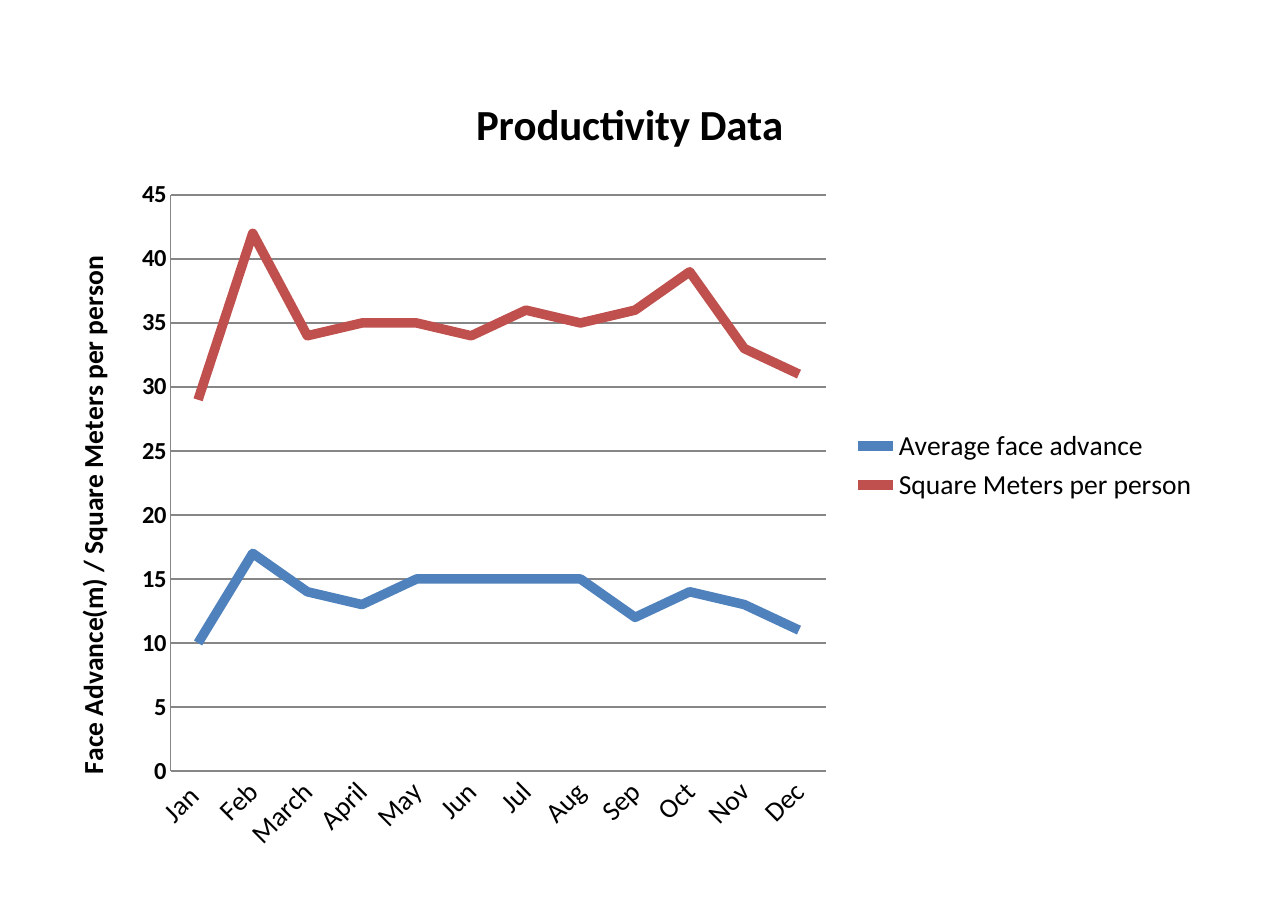
from lxml import etree
from pptx import Presentation
from pptx.chart.data import CategoryChartData
from pptx.dml.color import RGBColor
from pptx.enum.chart import XL_CHART_TYPE, XL_LEGEND_POSITION, XL_TICK_MARK
from pptx.oxml.ns import qn
from pptx.util import Inches, Pt

BLACK = RGBColor(0x00, 0x00, 0x00)
GRAY = RGBColor(0x86, 0x86, 0x86)
BLUE = RGBColor(0x4F, 0x81, 0xBD)
RED = RGBColor(0xC0, 0x50, 0x4D)

CHART_WIDTH, CHART_HEIGHT = 10.54, 7.27
MONTHS = ["Jan ", "Feb", "March", "April", "May", "Jun",
          "Jul", "Aug", "Sep", "Oct", "Nov", "Dec"]
SERIES = [
    ("Average face advance", BLUE,
     [10, 17, 14, 13, 15, 15, 15, 15, 12, 14, 13, 11]),
    ("Square Meters per person", RED,
     [29, 42, 34, 35, 35, 34, 36, 35, 36, 39, 33, 31]),
]


def style_font(font, size, bold):
    values = {"name": "Calibri", "size": Pt(size), "bold": bold}
    for name, value in values.items():
        setattr(font, name, value)
    font.color.rgb = BLACK


def place(element, index, left, top, width=None, height=None):
    """Give a chart part a manual layout, in inches from the chart corner."""
    for layout in element.findall(qn("c:layout")):
        element.remove(layout)
    values = {"xMode": "edge", "yMode": "edge",
              "x": left / CHART_WIDTH, "y": top / CHART_HEIGHT}
    if width is not None:
        values = {"layoutTarget": "inner", **values,
                  "w": width / CHART_WIDTH, "h": height / CHART_HEIGHT}
    layout = etree.Element(qn("c:layout"))
    manual = etree.SubElement(layout, qn("c:manualLayout"))
    for name, value in values.items():
        etree.SubElement(manual, qn(f"c:{name}")).set("val", str(value))
    element.insert(index, layout)


presentation = Presentation()
presentation.slide_width = Inches(11.69)
presentation.slide_height = Inches(8.27)
slide = presentation.slides.add_slide(presentation.slide_layouts[6])

chart_data = CategoryChartData()
chart_data.categories = MONTHS
for name, color, values in SERIES:
    chart_data.add_series(name, values)
chart = slide.shapes.add_chart(
    XL_CHART_TYPE.LINE, Inches(0.44), Inches(0.59),
    Inches(CHART_WIDTH), Inches(CHART_HEIGHT), chart_data).chart
style_font(chart.font, 10.5, False)

# Lines
chart.plots[0].vary_by_categories = False
for series, (name, color, values) in zip(chart.plots[0].series, SERIES):
    series.smooth = False
    series.format.line.width = Pt(6.25)
    series.format.line.color.rgb = color

# Axes
category_axis, value_axis = chart.category_axis, chart.value_axis
for axis, size, bold in [(category_axis, 18, False), (value_axis, 16, True)]:
    axis.major_tick_mark = XL_TICK_MARK.NONE
    axis.minor_tick_mark = XL_TICK_MARK.NONE
    axis.format.line.color.rgb = GRAY
    style_font(axis.tick_labels.font, size, bold)
value_axis.minimum_scale = 0
value_axis.maximum_scale = 45
value_axis.major_unit = 5
value_axis.has_major_gridlines = True
value_axis.major_gridlines.format.line.color.rgb = GRAY

# Titles and legend
chart.has_title = True
for title, text, size in [
        (chart.chart_title, "Productivity Data", 28),
        (value_axis.axis_title, "Face Advance(m) / Square Meters per person", 18)]:
    title.text_frame.text = text
    style_font(title.text_frame.paragraphs[0].runs[0].font, size, True)
chart.has_legend = True
chart.legend.position = XL_LEGEND_POSITION.RIGHT
chart.legend.include_in_layout = False
style_font(chart.legend.font, 18, False)

# Text rotation, in 60000ths of a degree
for owner, degrees in [("c:catAx/c:txPr", -45), ("c:valAx/c:title/c:tx/c:rich", -90)]:
    body = chart.element.xpath(f"c:chart/c:plotArea/{owner}/a:bodyPr")[0]
    body.set("rot", str(degrees * 60000))
    body.set("vert", "horz")

# Positions
plot_area = chart.element.xpath("c:chart/c:plotArea")[0]
place(plot_area, 0, 1.11, 1.18, 5.95, 5.23)
place(chart.element.xpath("c:chart/c:title")[0], 1, 3.81, 0.2)
place(plot_area.xpath("c:valAx/c:title")[0], 1, 0.18, 1.69)

presentation.save("out.pptx")
